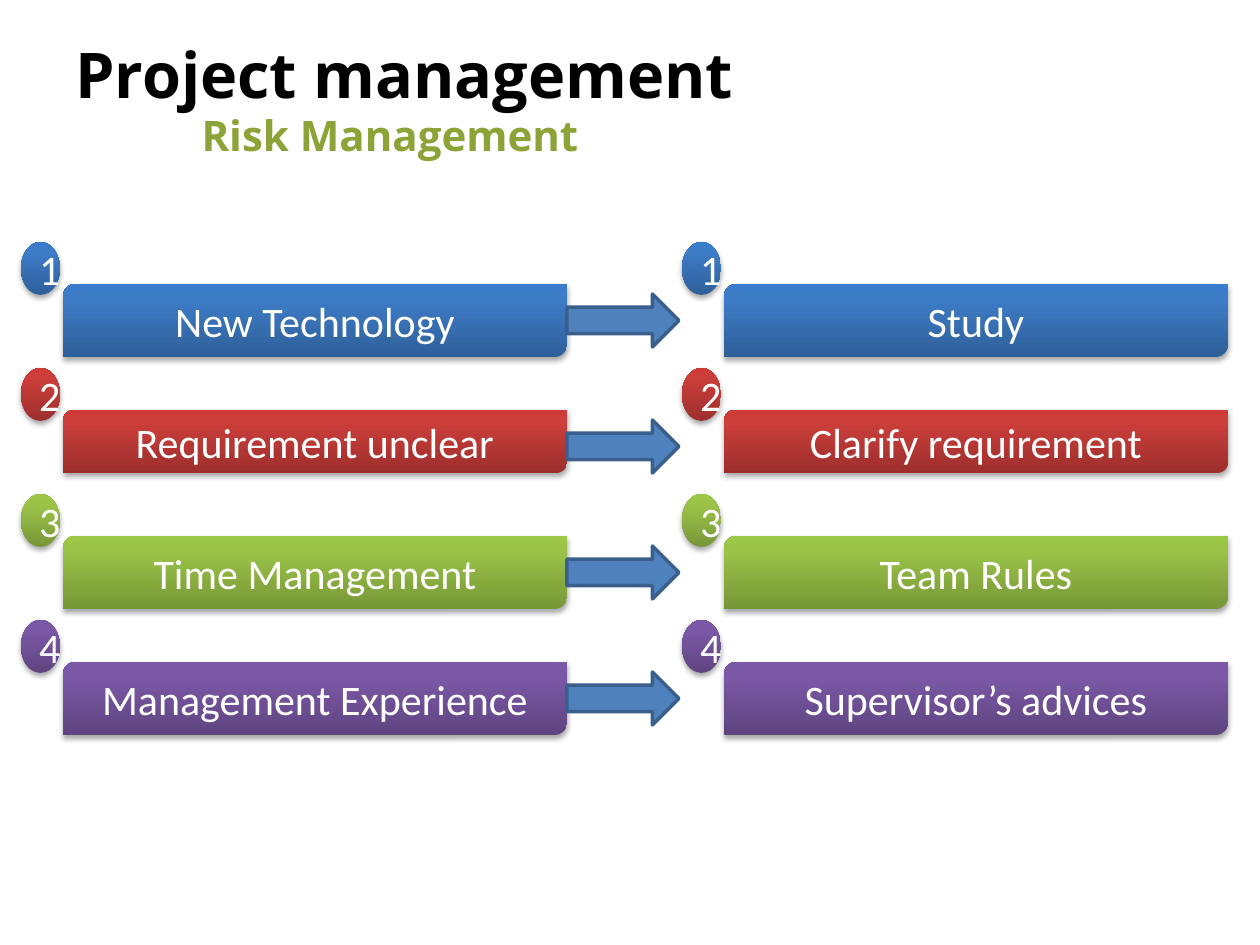
"""Builds the risk management slide: four risks, each with its answer."""
from pptx import Presentation
from pptx.dml.color import RGBColor
from pptx.enum.shapes import MSO_SHAPE
from pptx.enum.text import MSO_ANCHOR, PP_ALIGN
from pptx.oxml import parse_xml
from pptx.util import Pt

OVAL = MSO_SHAPE.OVAL
BAR = MSO_SHAPE.ROUND_2_DIAG_RECTANGLE
ARROW = MSO_SHAPE.RIGHT_ARROW
MIDDLE = MSO_ANCHOR.MIDDLE
LEFT, CENTER = PP_ALIGN.LEFT, PP_ALIGN.CENTER

THEME = {
    "head": "Open Sans", "body": "Calibri",
    "title": 36, "text": 24,
    "black": "000000", "white": "FFFFFF", "olive": "8CA338",
    "arrow": "4F81BD", "edge": "3A5F8C",
    "rows": [
        ("2F5F99", "3D7CC7", "3A7CCB"),
        ("9C2F2D", "CB3E3A", "CE3B37"),
        ("779737", "9BC348", "9DC746"),
        ("5F4480", "7B58A6", "7C57A8"),
    ],
}

TITLE = "Project management"
TOPIC = "Risk Management"
COLUMNS = [
    ["New Technology", "Requirement unclear", "Time Management", "Management Experience"],
    ["Study", "Clarify requirement", "Team Rules", "Supervisor’s advices"],
]
HEIGHTS = [73, 63, 73, 73]
STOPS = (0, 80, 100)
PITCH = 126
SHIFT = 661

SCALE = 914400 / 126
NS = 'xmlns:a="http://schemas.openxmlformats.org/drawingml/2006/main"'


def emu(*sizes):
    return [round(size * SCALE) for size in sizes]


def write(shape, text, font="body", size="text", color="white", bold=False, align=CENTER):
    frame = shape.text_frame
    frame.word_wrap = True
    frame.vertical_anchor = MIDDLE
    para = frame.paragraphs[0]
    para.alignment = align
    run = para.add_run()
    run.text = text
    run.font.name = THEME[font]
    run.font.size = Pt(THEME[size])
    run.font.bold = bold
    run.font.color.rgb = RGBColor.from_string(THEME[color])


def heading(slide, box, text, indent=0, **style):
    shape = slide.shapes.add_textbox(*emu(*box))
    shape.text_frame.margin_left += emu(indent)[0]
    write(shape, text, font="head", bold=True, align=LEFT, **style)


def glossy(slide, kind, box, text, colors):
    shape = slide.shapes.add_shape(kind, *emu(*box))
    stops = "".join(
        f'<a:gs pos="{pos * 1000}"><a:srgbClr val="{color}"/></a:gs>'
        for pos, color in zip(STOPS, colors)
    )
    props = shape.element.spPr
    props.append(parse_xml(
        f'<a:gradFill {NS} rotWithShape="1"><a:gsLst>{stops}</a:gsLst>'
        '<a:lin ang="16200000" scaled="0"/></a:gradFill>'
    ))
    shape.line.fill.background()
    props.append(parse_xml(
        f'<a:effectLst {NS}><a:outerShdw blurRad="40000" dist="23000" dir="5400000" '
        f'rotWithShape="0"><a:srgbClr val="{THEME["black"]}"><a:alpha val="35000"/>'
        '</a:srgbClr></a:outerShdw></a:effectLst>'
    ))
    write(shape, text)


def arrow(slide, box):
    shape = slide.shapes.add_shape(ARROW, *emu(*box))
    shape.shadow.inherit = False
    shape.fill.solid()
    shape.fill.fore_color.rgb = RGBColor.from_string(THEME["arrow"])
    shape.line.color.rgb = RGBColor.from_string(THEME["edge"])
    shape.line.width = Pt(2)


def main():
    deck = Presentation()
    deck.slide_width, deck.slide_height = emu(1260, 945)
    slide = deck.slides.add_slide(deck.slide_layouts[6])
    heading(slide, (63, 21, 1134, 105), TITLE, size="title", color="black")
    heading(slide, (63, 101, 1134, 67), TOPIC, indent=126, color="olive")
    for col, labels in enumerate(COLUMNS):
        left = col * SHIFT
        for row, label in enumerate(labels):
            top = row * PITCH
            colors = THEME["rows"][row]
            glossy(slide, OVAL, (21 + left, 242 + top, 39, 53), str(row + 1), colors)
            glossy(slide, BAR, (63 + left, 284 + top, 504, HEIGHTS[row]), label, colors)
    for row in range(len(HEIGHTS)):
        arrow(slide, (567, 294 + row * PITCH, 112, 53))
    deck.save("out.pptx")


if __name__ == "__main__":
    main()
